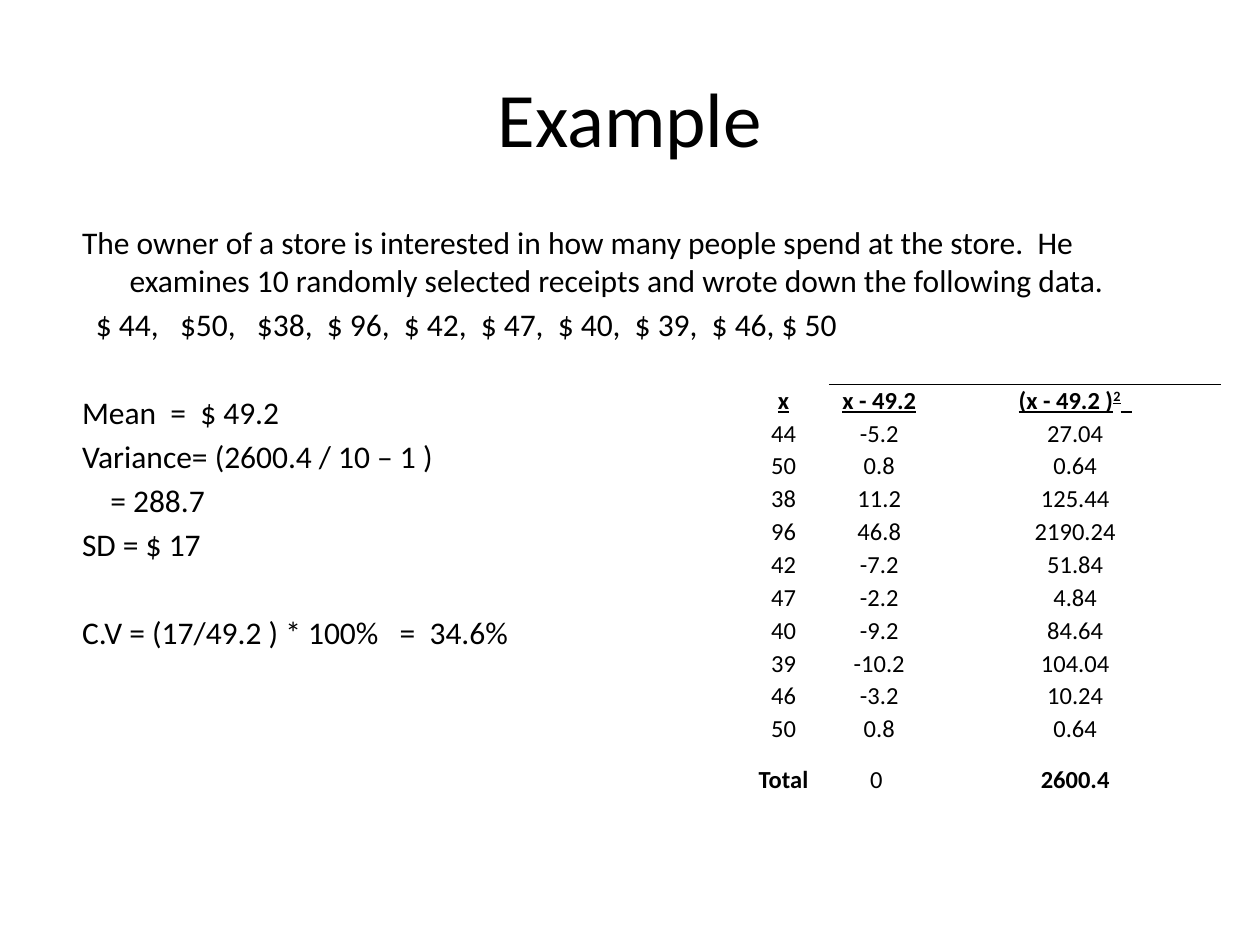
from dataclasses import dataclass

from lxml.etree import SubElement
from pptx import Presentation
from pptx.dml.color import RGBColor
from pptx.enum.text import MSO_ANCHOR, MSO_AUTO_SIZE, PP_ALIGN
from pptx.oxml import parse_xml
from pptx.oxml.ns import nsdecls, qn
from pptx.util import Cm, Pt


@dataclass(frozen=True)
class Theme:
    font: str = "Calibri"
    ink: RGBColor = RGBColor(0, 0, 0)
    paper: RGBColor = RGBColor(255, 255, 255)
    title_size: int = 44
    body_size: int = 18
    table_size: int = 14


theme = Theme()
NO_TABLE_STYLE = "{2D5ABB26-0587-4C30-8999-92F81FD0307C}"


def write(paragraph, text, size, bold=False, underline=False, raised=False, align=None):
    """Append one formatted run to the paragraph."""
    run = paragraph.add_run()
    run.text = text
    run.font.name = theme.font
    run.font.size = Pt(size)
    run.font.color.rgb = theme.ink
    run.font.bold = bold
    run.font.underline = underline
    if raised:
        run.font._element.set("baseline", "30000")
    if align is not None:
        paragraph.alignment = align


presentation = Presentation()
presentation.slide_width = Cm(25.4)
presentation.slide_height = Cm(19.05)
slide = presentation.slides.add_slide(presentation.slide_layouts[1])

# Title
heading = slide.shapes.title
heading.left, heading.top, heading.width, heading.height = Cm(1.27), Cm(0.76), Cm(22.86), Cm(3.18)
heading.text_frame.vertical_anchor = MSO_ANCHOR.MIDDLE
write(heading.text_frame.paragraphs[0], "Example", theme.title_size, align=PP_ALIGN.CENTER)

# Worked solution: text, left margin and first-line indent in cm, space before in points
line_gap, section_gap = 3.5, 28.8
solution_lines = [
    ("The owner of a store is interested in how many people spend at the store.  He "
     "examines 10 randomly selected receipts and wrote down the following data.", 0.96, -0.96, line_gap),
    ("$ 44,   $50,   $38,  $ 96,  $ 42,  $ 47,  $ 40,  $ 39,  $ 46, $ 50", 0.28, 0, line_gap),
    ("Mean  =  $ 49.2", 0, 0, section_gap),
    ("Variance= (2600.4 / 10 – 1 )", 0, 0, line_gap),
    ("= 288.7", 0.57, 0, line_gap),
    ("SD = $ 17", 0, 0, line_gap),
    ("C.V = (17/49.2 ) * 100%   =  34.6%", 0, 0, section_gap),
]
solution = slide.placeholders[1]
solution.left, solution.top, solution.width, solution.height = Cm(1.4), Cm(4.37), Cm(21.59), Cm(12.7)
solution.text_frame.auto_size = MSO_AUTO_SIZE.NONE
for index, (text, margin, indent, gap) in enumerate(solution_lines):
    frame = solution.text_frame
    paragraph = frame.add_paragraph() if index else frame.paragraphs[0]
    write(paragraph, text, theme.body_size)
    paragraph.space_before = Pt(gap)
    properties = paragraph._p.get_or_add_pPr()
    properties.set("marL", str(Cm(margin)))
    properties.set("indent", str(Cm(indent)))
    SubElement(properties, qn("a:buNone"))

# Deviations table
deviations = [
    ("x", "x - 49.2", "(x - 49.2 )"),
    ("44", "-5.2", "27.04"),
    ("50", "0.8", "0.64"),
    ("38", "11.2", "125.44"),
    ("96", "46.8", "2190.24"),
    ("42", "-7.2", "51.84"),
    ("47", "-2.2", "4.84"),
    ("40", "-9.2", "84.64"),
    ("39", "-10.2", "104.04"),
    ("46", "-3.2", "10.24"),
    ("50", "0.8", "0.64"),
    ("Total", "0 ", "2600.4"),
]
column_widths = [1.83, 2.03, 5.87]
row_height, total_height = 0.61, 1.37
last_row = len(deviations) - 1
deviation_frame = slide.shapes.add_table(
    len(deviations), len(column_widths), Cm(14.88), Cm(7.75),
    Cm(sum(column_widths)), Cm(row_height * last_row + total_height))
deviation_table = deviation_frame.table
deviation_table.first_row = deviation_table.horz_banding = False
deviation_table._tbl.tblPr.find(qn("a:tableStyleId")).text = NO_TABLE_STYLE
for column, width in zip(deviation_table.columns, column_widths):
    column.width = Cm(width)

for row, values in enumerate(deviations):
    deviation_table.rows[row].height = Cm(total_height if row == last_row else row_height)
    for column, value in enumerate(values):
        cell = deviation_table.cell(row, column)
        cell.margin_left = cell.margin_right = Cm(0.08)
        cell.margin_top = cell.margin_bottom = Cm(0.03)
        cell.vertical_anchor = MSO_ANCHOR.MIDDLE
        cell.fill.solid()
        cell.fill.fore_color.rgb = theme.paper
        is_header = row == 0
        is_bold = is_header or (row == last_row and column != 1)
        write(cell.text_frame.paragraphs[0], value, theme.table_size,
              bold=is_bold, underline=is_header, align=PP_ALIGN.CENTER)

squared_heading = deviation_table.cell(0, 2).text_frame.paragraphs[0]
write(squared_heading, "2", theme.table_size, bold=True, underline=True, raised=True)
write(squared_heading, "  ", theme.table_size, bold=True, underline=True)

# Rule above the two computed columns
for column in (1, 2):
    cell_properties = deviation_table.cell(0, column)._tc.get_or_add_tcPr()
    cell_properties.insert(0, parse_xml(
        f'<a:lnT {nsdecls("a")} w="{Pt(1)}"><a:solidFill>'
        f'<a:srgbClr val="{theme.ink}"/></a:solidFill></a:lnT>'))

presentation.save("out.pptx")
